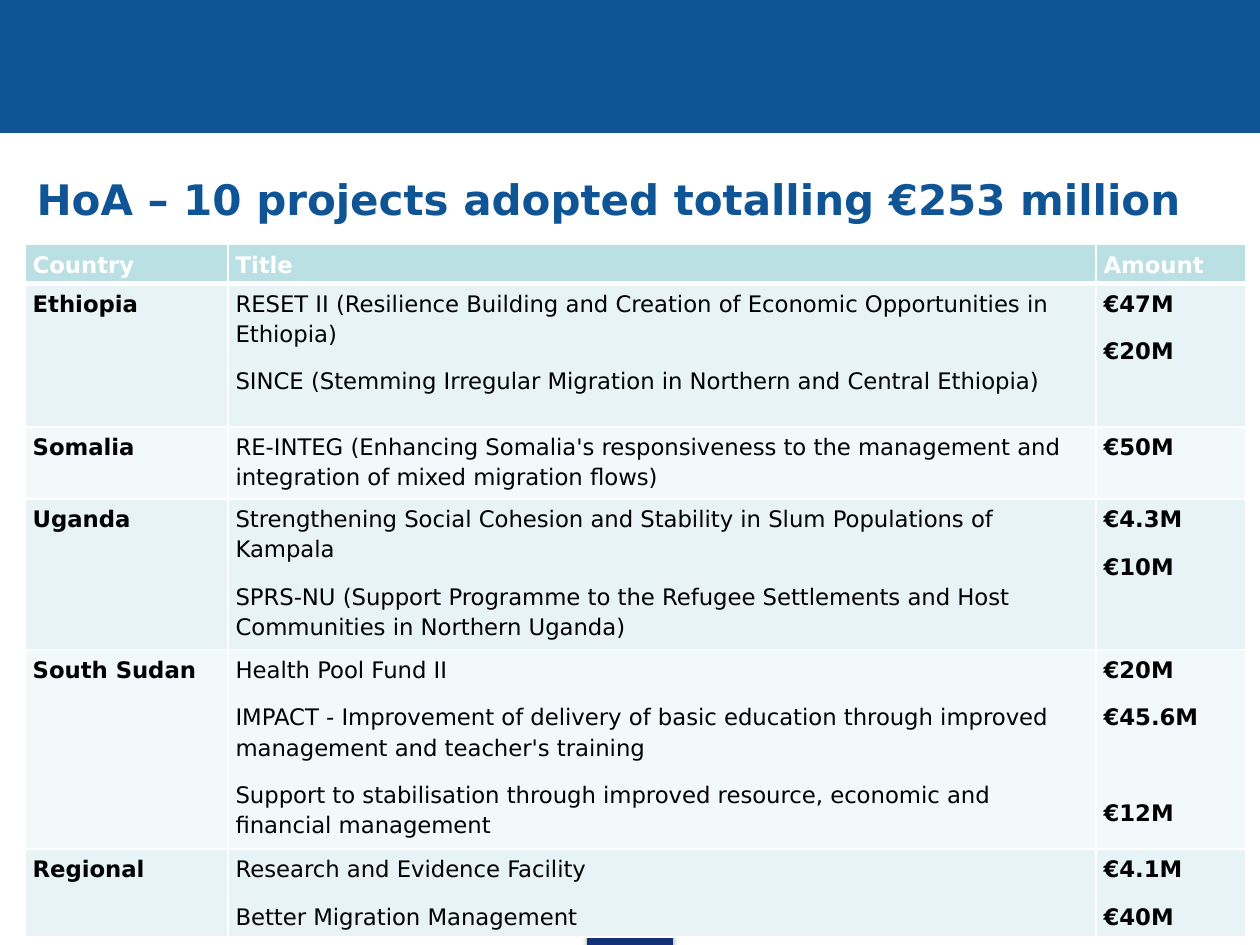
import pptx
import pptx.util
import pptx.dml.color
import pptx.enum.shapes
import pptx.enum.text
import pptx.oxml
import pptx.oxml.ns

Inches, Pt = pptx.util.Inches, pptx.util.Pt

# Content
HEADING = "HoA – 10 projects adopted totalling €253 million"
HEADER = ("Country", "Title", "Amount")
# Country, project titles, amounts
PROJECTS = [
    ("Ethiopia",
     ["RESET II (Resilience Building and Creation of Economic Opportunities in Ethiopia)",
      "SINCE (Stemming Irregular Migration in Northern and Central Ethiopia)"],
     ["€47M", "€20M"]),
    ("Somalia",
     ["RE-INTEG (Enhancing Somalia's responsiveness to the management and "
      "integration of mixed migration flows)"],
     ["€50M"]),
    ("Uganda",
     ["Strengthening Social Cohesion and Stability in Slum Populations of Kampala",
      "SPRS-NU (Support Programme to the Refugee Settlements and Host "
      "Communities in Northern Uganda)"],
     ["€4.3M", "€10M"]),
    ("South Sudan",
     ["Health Pool Fund II",
      "IMPACT - Improvement of delivery of basic education through improved "
      "management and teacher's training",
      "Support to stabilisation through improved resource, economic and "
      "financial management"],
     ["€20M", "€45.6M", "€12M"]),
    ("Regional",
     ["Research and Evidence Facility", "Better Migration Management"],
     ["€4.1M", "€40M"]),
]
LOWERED = {"€12M": 27.4}  # extra space before, one line deep

# Style
COLORS = {"band": "0F5494", "tab": "133176", "header": "BBE0E3", "odd": "E7F3F4",
          "even": "F3F9FA", "white": "FFFFFF", "black": "000000"}
FONT = "DejaVu Sans"
HEADING_FONT = {"name": FONT, "size": Pt(24), "bold": True}
CELL_FONT = {"name": FONT, "size": Pt(13)}
CELL_SPACING = {"line_spacing": 1.15, "space_after": Pt(10)}
CELL_MARGINS = {"margin_left": Inches(0.06), "margin_right": Inches(0.06),
                "margin_top": Inches(0.03), "margin_bottom": Inches(0.03)}

# Grid
WIDTH, HEIGHT = 10, 7.5
COLUMNS = (1.61, 6.89, 1.19)
ROWS = (0.28, 1.14, 0.57, 1.14, 1.5, 0.65)
TABLE_LEFT, TABLE_TOP = 0.2, 1.94
TAB_WIDTH, TAB_HEIGHT = 0.67, 0.22


def rgb(key):
    return pptx.dml.color.RGBColor.from_string(COLORS[key])


def apply(target, values):
    for attribute, value in values.items():
        setattr(target, attribute, value)


def add_block(slide, box, color):
    block = slide.shapes.add_shape(pptx.enum.shapes.MSO_SHAPE.RECTANGLE, *map(Inches, box))
    block.shadow.inherit = False
    block.fill.solid()
    block.fill.fore_color.rgb = block.line.color.rgb = rgb(color)
    block.line.width = Pt(0.75)
    return block


def add_shadow(block):
    effects = block._element.spPr.find(pptx.oxml.ns.qn("a:effectLst"))
    effects.append(pptx.oxml.parse_xml(
        f'<a:outerShdw {pptx.oxml.ns.nsdecls("a")} blurRad="{Pt(3.1)}" dist="{Pt(1.8)}" '
        f'dir="5400000" rotWithShape="0"><a:srgbClr val="{COLORS["black"]}">'
        '<a:alpha val="35000"/></a:srgbClr></a:outerShdw>'))


def add_borders(cell, top, bottom):
    sides = (("lnL", 1), ("lnR", 1), ("lnT", top), ("lnB", bottom))
    for position, (side, points) in enumerate(sides):
        cell._tc.get_or_add_tcPr().insert(position, pptx.oxml.parse_xml(
            f'<a:{side} {pptx.oxml.ns.nsdecls("a")} w="{Pt(points)}"><a:solidFill>'
            f'<a:srgbClr val="{COLORS["white"]}"/></a:solidFill></a:{side}>'))


def fill_cell(cell, lines, fill, color, bold):
    apply(cell, CELL_MARGINS)
    cell.fill.solid()
    cell.fill.fore_color.rgb = rgb(fill)
    frame = cell.text_frame
    for index, line in enumerate(lines):
        paragraph = frame.add_paragraph() if index else frame.paragraphs[0]
        paragraph.text = line
        apply(paragraph, CELL_SPACING)
        if line in LOWERED:
            paragraph.space_before = Pt(LOWERED[line])
        apply(paragraph.runs[0].font, {**CELL_FONT, "bold": bold})
        paragraph.runs[0].font.color.rgb = rgb(color)


def add_heading(slide):
    box = slide.shapes.add_textbox(*map(Inches, (-0.43, 1.07, 10.87, 1.02)))
    frame = box.text_frame
    apply(frame, {"word_wrap": True, "margin_left": Inches(0.72),
                  "vertical_anchor": pptx.enum.text.MSO_ANCHOR.MIDDLE})
    frame.text = HEADING
    font = frame.paragraphs[0].runs[0].font
    apply(font, HEADING_FONT)
    font.color.rgb = rgb("band")


def add_projects(slide):
    table = slide.shapes.add_table(
        len(ROWS), len(COLUMNS), Inches(TABLE_LEFT), Inches(TABLE_TOP),
        Inches(sum(COLUMNS)), Inches(sum(ROWS))).table
    for column, width in zip(table.columns, COLUMNS):
        column.width = Inches(width)
    for row, height in zip(table.rows, ROWS):
        row.height = Inches(height)

    rows = [[[label] for label in HEADER]]
    rows += [[[country], titles, amounts] for country, titles, amounts in PROJECTS]
    for r, row in enumerate(rows):
        fill = "header" if r == 0 else "odd" if r % 2 else "even"
        color = "white" if r == 0 else "black"
        for c, lines in enumerate(row):
            cell = table.cell(r, c)
            fill_cell(cell, lines, fill, color, bold=r == 0 or c != 1)
            add_borders(cell, top=3 if r == 1 else 1, bottom=3 if r == 0 else 1)


def main():
    deck = pptx.Presentation()
    deck.slide_width, deck.slide_height = Inches(WIDTH), Inches(HEIGHT)
    slide = deck.slides.add_slide(deck.slide_layouts[6])

    # Top band and bottom tab
    add_block(slide, (0, 0, WIDTH, HEIGHT * 0.14), "band")
    tab = add_block(slide, ((WIDTH - TAB_WIDTH) / 2, HEIGHT - TAB_HEIGHT,
                            TAB_WIDTH, TAB_HEIGHT), "tab")
    add_shadow(tab)

    # Heading and project table
    add_heading(slide)
    add_projects(slide)
    deck.save("out.pptx")


if __name__ == "__main__":
    main()
